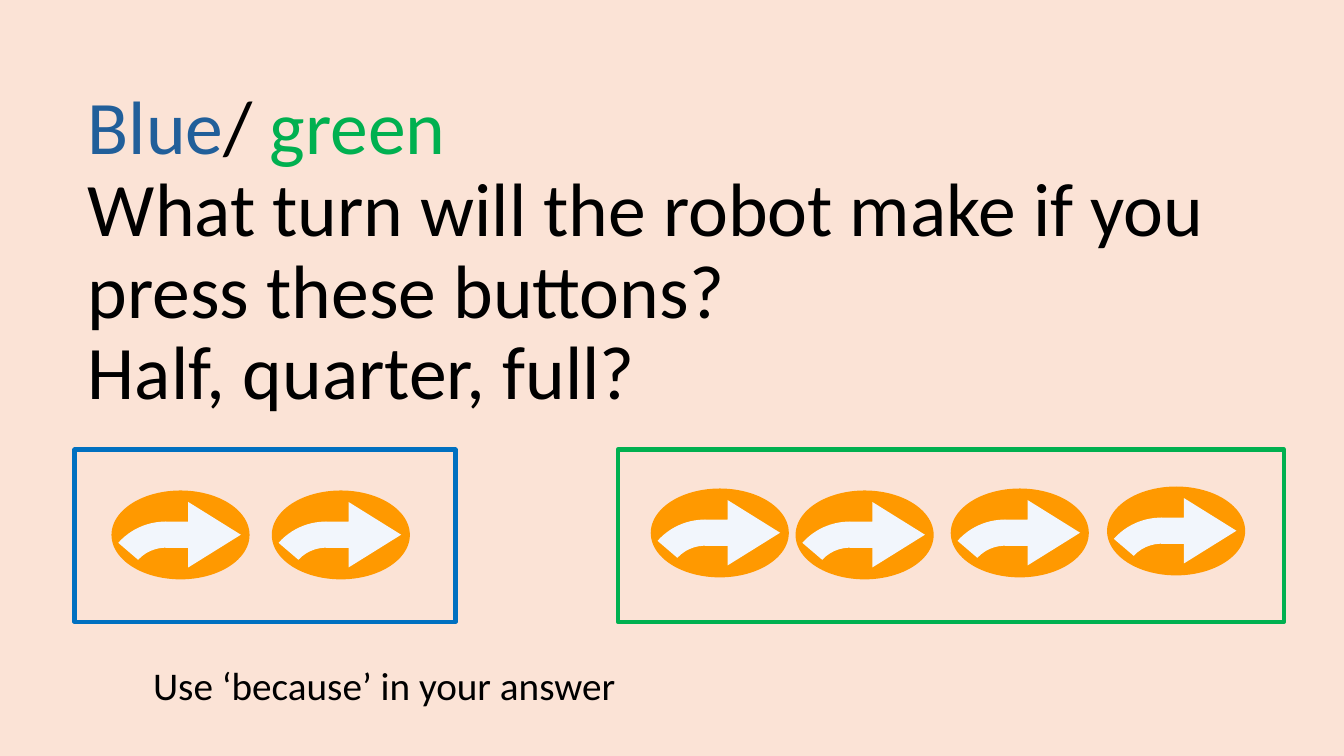
from dataclasses import dataclass

from pptx import Presentation
from pptx.dml.color import RGBColor
from pptx.enum.shapes import MSO_SHAPE as Preset
from pptx.enum.text import MSO_ANCHOR, MSO_AUTO_SIZE, PP_ALIGN
from pptx.shapes.autoshape import Shape
from pptx.shapes.shapetree import GroupShapes, SlideShapes
from pptx.slide import Slide
from pptx.util import Cm, Pt

BACKGROUND = RGBColor(0xFB, 0xE3, 0xD6)
BLACK = RGBColor(0x00, 0x00, 0x00)
TITLE_BLUE = RGBColor(0x21, 0x5F, 0x9A)
GREEN = RGBColor(0x00, 0xB0, 0x50)
FRAME_BLUE = RGBColor(0x00, 0x70, 0xC0)
ORANGE = RGBColor(0xFF, 0x99, 0x00)
ARROW_WHITE = RGBColor(0xF2, 0xF6, 0xFC)
FONT = "Calibri"


@dataclass(frozen=True)
class Part:
    """A piece of a button, placed from the button's top left corner (cm)."""
    preset: Preset
    left: float
    top: float
    width: float
    height: float
    color: RGBColor
    rotation: float = 0
    adjustments: tuple[float, ...] = ()


@dataclass(frozen=True)
class Button:
    left: float
    top: float


@dataclass(frozen=True)
class Frame:
    left: float
    width: float
    color: RGBColor
    buttons: tuple[Button, ...]


BUTTON_PARTS = (
    Part(Preset.OVAL, 0, 0, 3.48, 2.24, ORANGE),
    Part(Preset.RIGHT_ARROW, 1.36, 0.29, 1.9, 1.65, ARROW_WHITE,
         adjustments=(0.4, 0.803)),
    Part(Preset.BLOCK_ARC, -0.19, 0.75, 3.12, 3.18, ARROW_WHITE,
         rotation=267.7, adjustments=(187.67, 1.518, 0.211)),
)
FRAME_TOP, FRAME_HEIGHT = 11.33, 4.34
FRAMES = (
    Frame(15.57, 16.79, GREEN, (Button(16.4, 12.31), Button(20.05, 12.36),
                                Button(23.96, 12.31), Button(27.9, 12.26))),
    Frame(1.88, 9.6, FRAME_BLUE, (Button(2.81, 12.36), Button(6.85, 12.36))),
)
TITLE_RUNS = (
    ("Blue", TITLE_BLUE),
    ("/ ", BLACK),
    ("green", GREEN),
    ("\vWhat turn will the robot make if you press these buttons?"
     "\vHalf, quarter, full?", BLACK),
)


def add_title(slide: Slide) -> None:
    title = slide.shapes.title
    title.left, title.top = Cm(1.96), Cm(2.13)
    title.width, title.height = Cm(29.97), Cm(7.54)
    text_frame = title.text_frame
    text_frame.word_wrap = True
    text_frame.auto_size = MSO_AUTO_SIZE.NONE
    text_frame.vertical_anchor = MSO_ANCHOR.TOP
    paragraph = text_frame.paragraphs[0]
    paragraph.alignment = PP_ALIGN.LEFT
    paragraph.line_spacing = 0.9
    for text, color in TITLE_RUNS:
        # A vertical tab stands for a line break
        for index, line in enumerate(text.split("\v")):
            if index:
                paragraph.add_line_break()
            if line:
                run = paragraph.add_run()
                run.text = line
                run.font.name = FONT
                run.font.size = Pt(54)
                run.font.color.rgb = color


def add_part(shapes: GroupShapes, button: Button, part: Part) -> Shape:
    shape = shapes.add_shape(part.preset, Cm(button.left + part.left),
                             Cm(button.top + part.top),
                             Cm(part.width), Cm(part.height))
    shape.shadow.inherit = False
    shape.rotation = part.rotation
    for index, value in enumerate(part.adjustments):
        shape.adjustments[index] = value
    shape.fill.solid()
    shape.fill.fore_color.rgb = part.color
    shape.line.fill.background()
    return shape


def add_frame(shapes: SlideShapes, frame: Frame) -> None:
    for button in frame.buttons:
        group = shapes.add_group_shape()
        for part in BUTTON_PARTS:
            add_part(group.shapes, button, part)
    outline = shapes.add_shape(Preset.RECTANGLE, Cm(frame.left), Cm(FRAME_TOP),
                               Cm(frame.width), Cm(FRAME_HEIGHT))
    outline.shadow.inherit = False
    outline.fill.background()
    outline.line.color.rgb = frame.color
    outline.line.width = Pt(3)


def add_hint(shapes: SlideShapes) -> None:
    text_box = shapes.add_textbox(Cm(3.61), Cm(16.54), Cm(14.81), Cm(1.45))
    text_box.text_frame.word_wrap = True
    paragraph = text_box.text_frame.paragraphs[0]
    paragraph.text = "Use ‘because’ in your answer"
    paragraph.font.name = FONT
    paragraph.font.size = Pt(28)
    paragraph.font.color.rgb = BLACK


def main() -> None:
    presentation = Presentation()
    presentation.slide_width, presentation.slide_height = Cm(33.87), Cm(19.05)
    slide = presentation.slides.add_slide(presentation.slide_layouts[5])
    slide.background.fill.solid()
    slide.background.fill.fore_color.rgb = BACKGROUND

    # Question
    add_title(slide)

    # Framed button sequences
    for frame in FRAMES:
        add_frame(slide.shapes, frame)

    # Answer hint
    add_hint(slide.shapes)

    presentation.save("out.pptx")


if __name__ == "__main__":
    main()
